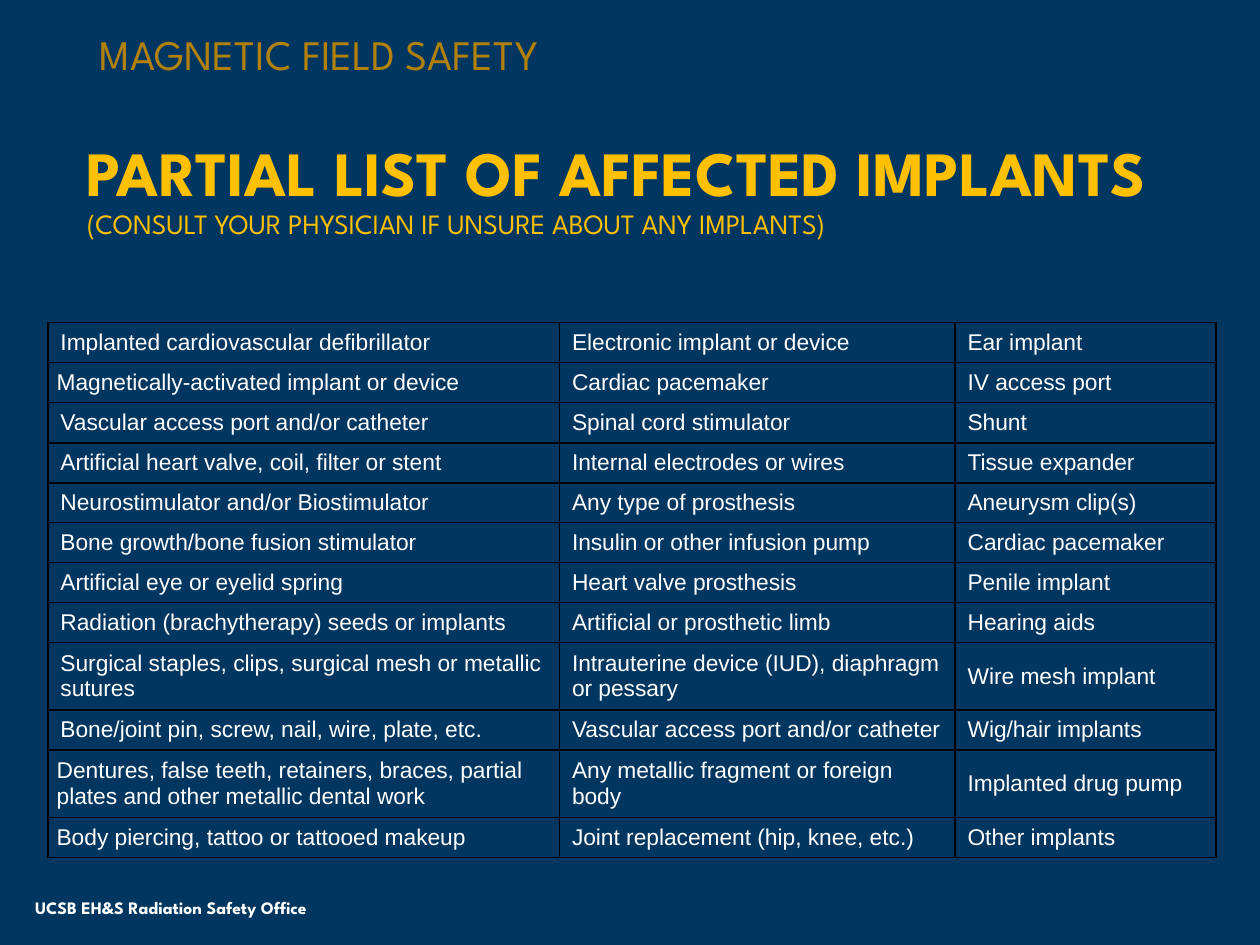
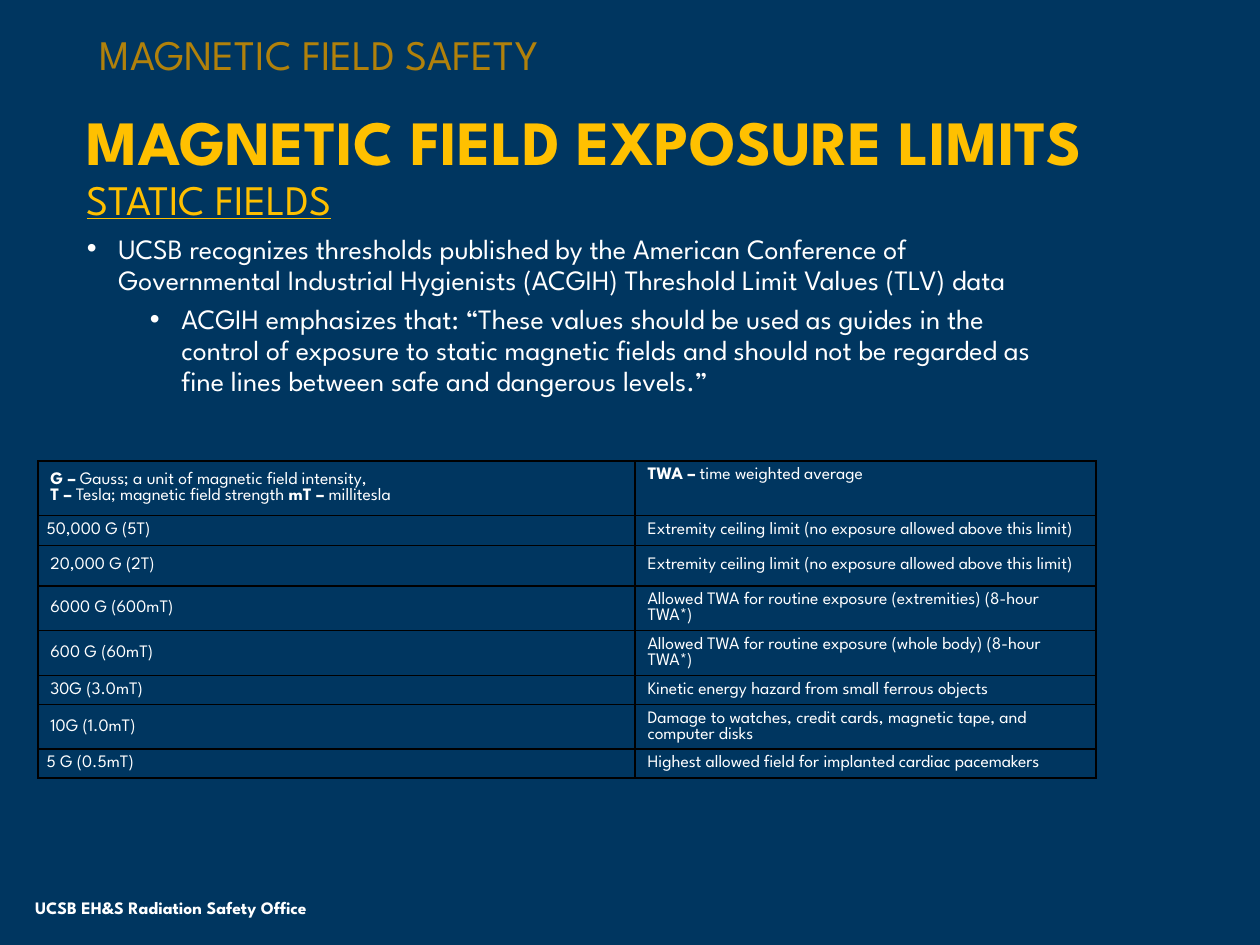
from lxml.etree import SubElement
from pptx import Presentation
from pptx.dml.color import RGBColor
from pptx.enum.text import MSO_ANCHOR as Anchor, MSO_AUTO_SIZE as AutoSize, PP_ALIGN as Align
from pptx.oxml.ns import qn
from pptx.util import Inches, Pt

COLORS = {"navy": "003660", "ochre": "B1810B", "gold": "FFC000", "white": "FFFFFF", "black": "000000"}
SPARTAN = "League Spartan"
WIDTH, HEIGHT = Inches(10), Inches(7.5)
COLUMNS, ROWS = 100, 75
TEXT_LEADING, TABLE_LEADING = 1.1, 0.92
MARGIN = 6.9

IMPLANTS = [
    ("Implanted cardiovascular defibrillator", "Electronic implant or device", "Ear implant"),
    ("Magnetically-activated implant or device", "Cardiac pacemaker", "IV access port"),
    ("Vascular access port and/or catheter", "Spinal cord stimulator", "Shunt"),
    ("Artificial heart valve, coil, filter or stent", "Internal electrodes or wires", "Tissue expander"),
    ("Neurostimulator and/or Biostimulator", "Any type of prosthesis", "Aneurysm clip(s)"),
    ("Bone growth/bone fusion stimulator", "Insulin or other infusion pump", "Cardiac pacemaker"),
    ("Artificial eye or eyelid spring", "Heart valve prosthesis", "Penile implant"),
    ("Radiation (brachytherapy) seeds or implants", "Artificial or prosthetic limb", "Hearing aids"),
    ("Surgical staples, clips, surgical mesh or metallic sutures",
     "Intrauterine device (IUD), diaphragm or pessary", "Wire mesh implant"),
    ("Bone/joint pin, screw, nail, wire, plate, etc.", "Vascular access port and/or catheter",
     "Wig/hair implants"),
    ("Dentures, false teeth, retainers, braces, partial plates and other metallic dental work",
     "Any metallic fragment or foreign body", "Implanted drug pump"),
    ("Body piercing, tattoo or tattooed makeup", "Joint replacement (hip, knee, etc.)", "Other implants"),
]
LIMITS = [
    ("|G –| Gauss; a unit of magnetic field intensity,\n|T –| Tesla; magnetic field strength |mT – |millitesla",
     "|TWA –| time weighted average"),
    ("50,000 G (5T)", "Extremity ceiling limit (no exposure allowed above this limit)"),
    ("20,000 G (2T)", "Extremity ceiling limit (no exposure allowed above this limit)"),
    ("6000 G (600mT)", "Allowed TWA for routine exposure (extremities) (8-hour TWA*)"),
    ("600 G (60mT)", "Allowed TWA for routine exposure (whole body) (8-hour TWA*)"),
    ("30G (3.0mT)", "Kinetic energy hazard from small ferrous objects"),
    ("10G (1.0mT)", "Damage to watches, credit cards, magnetic tape, and computer disks"),
    ("5 G (0.5mT)", "Highest allowed field for implanted cardiac pacemakers"),
]
GUIDANCE = [
    "UCSB recognizes thresholds published by the American Conference of Governmental Industrial "
    "Hygienists (ACGIH) Threshold Limit Values (TLV) data",
    "ACGIH emphasizes that: “These values should be used as guides in the control of exposure to static "
    "magnetic fields and should not be regarded as fine lines between safe and dangerous levels.”",
]


def across(columns):
    """Turn grid columns into a length."""
    return int(WIDTH * columns / COLUMNS)


def down(rows):
    """Turn grid rows into a length."""
    return int(HEIGHT * rows / ROWS)


def paragraph_at(frame, index):
    """Return the first paragraph of a frame, or append a new one."""
    return frame.add_paragraph() if index else frame.paragraphs[0]


def write(paragraph, text, size, color, font=SPARTAN, bold=False, underline=False, leading=None):
    """Add one styled run, with a line height relative to its size if given."""
    run = paragraph.add_run()
    run.text = text
    run.font.name, run.font.size = font, Pt(size)
    run.font.bold, run.font.underline = bold, underline
    run.font.color.rgb = RGBColor.from_string(COLORS[color])
    paragraph.alignment = Align.LEFT
    if leading:
        paragraph.line_spacing = Pt(round(size * leading, 1))


def add_text_frame(slide, left, top, width, height, inset=0):
    """Add a wrapping text box on the grid and return its frame."""
    frame = slide.shapes.add_textbox(across(left), down(top), across(width), down(height)).text_frame
    frame.word_wrap = True
    frame.margin_left = frame.margin_right = across(inset)
    frame.margin_top = frame.margin_bottom = down(inset / 2)
    return frame


def add_base(deck):
    """Add a slide with the shared background, title and office footer."""
    slide = deck.slides.add_slide(deck.slide_layouts[5])
    slide.background.fill.solid()
    slide.background.fill.fore_color.rgb = RGBColor.from_string(COLORS["navy"])
    title = slide.shapes.title
    title.left, title.top, title.width, title.height = across(MARGIN), down(2.4), across(69.5), down(4.4)
    title.text_frame.auto_size = AutoSize.NONE
    title.text_frame.vertical_anchor = Anchor.BOTTOM
    write(title.text_frame.paragraphs[0], "MAGNETIC FIELD SAFETY", 24, "ochre")
    office = add_text_frame(slide, 1.8, 70.6, 48.2, 2.8, inset=1)
    office.vertical_anchor = Anchor.MIDDLE
    write(office.paragraphs[0], "UCSB EH&S Radiation Safety Office", 10, "white", bold=True)
    return slide


def add_heading(slide, top, width, heading, subheading, size, underline=False):
    """Add a large gold heading above a lighter second line."""
    frame = add_text_frame(slide, MARGIN, top, width, 5.1)
    write(frame.paragraphs[0], heading, 36, "gold", bold=True, leading=TEXT_LEADING)
    write(frame.add_paragraph(), subheading, size, "gold", underline=underline, leading=TEXT_LEADING)


def add_bullets(slide, top, points):
    """Add bullets, each one level deeper than the one before."""
    frame = add_text_frame(slide, MARGIN, top, 76.4, 18)
    for level, point in enumerate(points):
        paragraph = paragraph_at(frame, level)
        paragraph.level = level
        properties = paragraph._p.get_or_add_pPr()
        properties.set("marL", str(across(2.5 + 5 * level)))
        properties.set("indent", str(-across(2.5)))
        SubElement(properties, qn("a:buFont"), typeface="Arial")
        SubElement(properties, qn("a:buChar"), char="•")
        if level:
            paragraph.space_before = Pt(5)
        write(paragraph, point, 16, "white", leading=TEXT_LEADING)


def outline(cell):
    """Draw a thin black border on all sides of a cell."""
    properties = cell._tc.get_or_add_tcPr()
    for position, side in enumerate(("a:lnL", "a:lnR", "a:lnT", "a:lnB")):
        line = properties.makeelement(qn(side), {"w": str(Pt(1))})
        SubElement(SubElement(line, qn("a:solidFill")), qn("a:srgbClr"), val=COLORS["black"])
        properties.insert(position, line)


def fill_cell(cell, text, size, font, leading, tight):
    """Write a cell line by line, with bold parts between bars."""
    cell.fill.background()
    cell.vertical_anchor = Anchor.MIDDLE
    if tight:
        cell.margin_left = cell.margin_right = across(0.7)
        cell.margin_top = cell.margin_bottom = 0
    for number, line in enumerate(text.split("\n")):
        paragraph = paragraph_at(cell.text_frame, number)
        for part, words in enumerate(line.split("|")):
            if words:
                write(paragraph, words, size, "white", font, bold=part % 2 == 1, leading=leading)
    outline(cell)


def add_grid(slide, left, top, widths, heights, entries, size, font, tight_rows, leading=None):
    """Add an outlined table whose first column has some tightly set rows."""
    table = slide.shapes.add_table(len(heights), len(widths), across(left), down(top),
                                   across(sum(widths)), down(sum(heights))).table
    table.first_row = table.horz_banding = False
    for column, width in zip(table.columns, widths):
        column.width = across(width)
    for r, (height, entry) in enumerate(zip(heights, entries)):
        table.rows[r].height = down(height)
        for c, text in enumerate(entry):
            fill_cell(table.cell(r, c), text, size, font, leading, c == 0 and r in tight_rows)
    return table


def add_implants(deck):
    """Build the slide that lists affected implants."""
    slide = add_base(deck)
    add_heading(slide, 11.1, 93.1, "PARTIAL LIST OF AFFECTED IMPLANTS",
                "(CONSULT YOUR PHYSICIAN IF UNSURE ABOUT ANY IMPLANTS)", 16)
    heights = [3, 3, 3.2] + [3] * 5 + [5.1, 3, 5.1, 3]
    add_grid(slide, 3.8, 25.6, (40.6, 31.4, 20.7), heights, IMPLANTS, 13, "Arial", {1, 10, 11})


def add_limits(deck):
    """Build the slide on static field exposure limits."""
    slide = add_base(deck)
    add_heading(slide, 8.6, 86.9, "MAGNETIC FIELD EXPOSURE LIMITS", "STATIC FIELDS", 24, underline=True)
    add_bullets(slide, 18.6, GUIDANCE)
    heights = (4.3, 2.4, 3.2, 3.5, 3.5, 2.3, 3.5, 2.3)
    limits = add_grid(slide, 3, 36.6, (47.4, 36.6), heights, LIMITS, 10, SPARTAN, {1, 7}, TABLE_LEADING)
    limits.cell(0, 1).vertical_anchor = Anchor.TOP


def main():
    """Build and save the deck."""
    deck = Presentation()
    deck.slide_width, deck.slide_height = WIDTH, HEIGHT
    add_implants(deck)
    add_limits(deck)
    deck.save("out.pptx")


if __name__ == "__main__":
    main()
